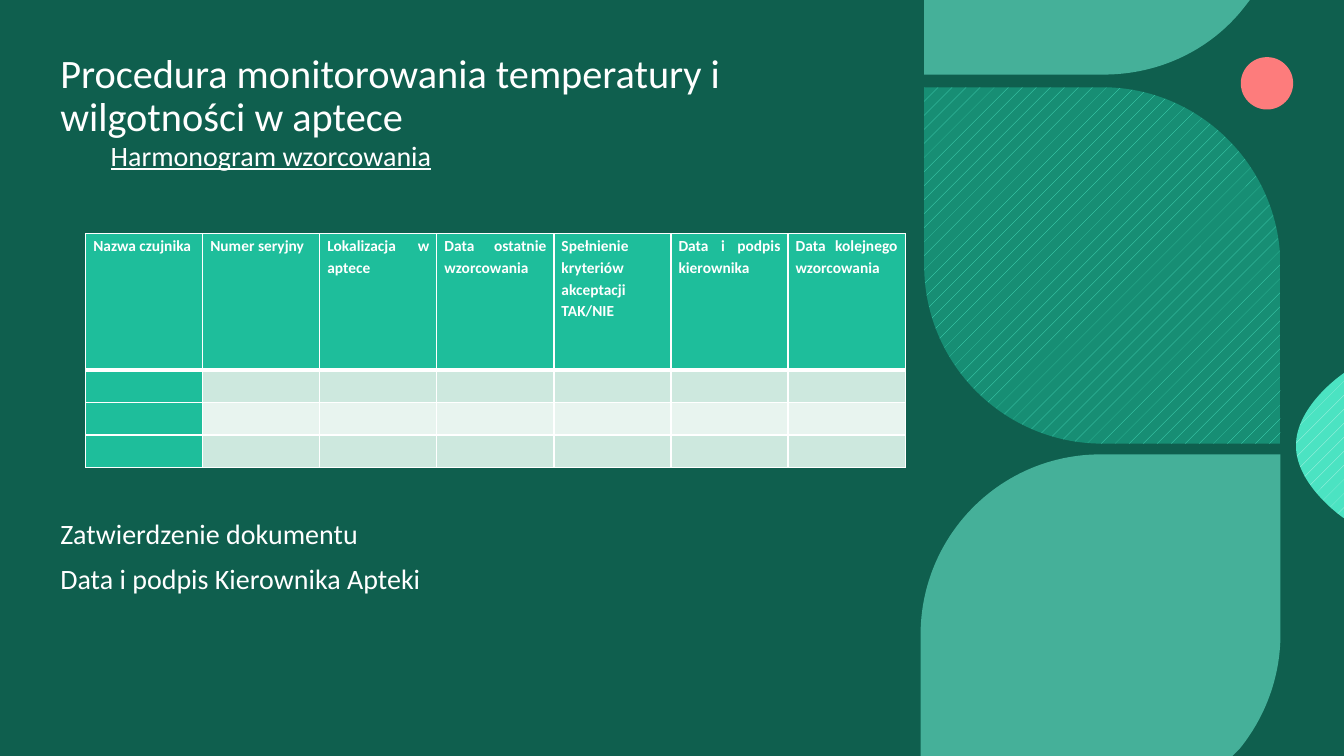
from lxml import etree
from pptx import Presentation
from pptx import util as u
from pptx.dml.color import RGBColor
from pptx.enum import dml, shapes, text
from pptx.oxml import ns

COLORS = {
    "background": "09392F", "veil": "18997E", "dot": "FD7C7C", "leaf": "69E7CC",
    "bright": "4BE3C2", "pale": "C3F6EB", "deep": "178E74", "white": "FFFFFF",
    "header": "1EBE9B", "band": "CDE8DE", "light_band": "E8F4EF",
}
FONT = "Calibri"
SLIDE_SIZE = (33.87, 19.05)

TITLE = "Procedura monitorowania temperatury i wilgotności w aptece"
TITLE_BOX = (1.27, 1.22, 21.34, 2.44)
BODY_BOX = (1.27, 3.45, 21.34, 13.72)
# text, format
BODY = [
    ("Harmonogram wzorcowania", {"indent": 1.27, "underline": True}),
    ("Zatwierdzenie dokumentu", {"before": 249}),
    ("Data i podpis Kierownika Apteki", {"before": 10}),
]

HEADINGS = [
    "Nazwa czujnika", "Numer seryjny", "Lokalizacja w aptece", "Data ostatnie wzorcowania",
    "Spełnienie kryteriów akceptacji TAK/NIE", "Data i podpis kierownika",
    "Data kolejnego wzorcowania",
]
TABLE_LEFT, TABLE_TOP, COLUMN_WIDTH = 2.16, 5.89, 2.95
ROW_HEIGHTS = [3.43, 0.82, 0.82, 0.82]

# Pairs are corners; six numbers are a Bézier curve (two controls and an end).
LEAVES = [
    {"fill": "leaf", "outline": [
        (23.29, 0), (31.5, 0), (31.32, 0.23), (30.51, 1.24, 29.24, 1.88, 27.81, 1.88),
        (23.29, 1.88)]},
    {"fill": "leaf", "outline": [
        (27.74, 11.45), (32.27, 11.45), (32.27, 15.98),
        (32.27, 17.07, 31.88, 18.08, 31.24, 18.87), (31.06, 19.05), (23.2, 19.05),
        (23.2, 16), (23.2, 13.49, 25.22, 11.45, 27.74, 11.45)]},
    {"pattern": ("pale", "bright"), "outline": [
        (33.87, 9.4), (33.87, 13.06), (33.87, 13.06, 32.66, 12.24, 32.66, 11.23),
        (32.66, 10.21, 33.87, 9.4, 33.87, 9.4)]},
    {"pattern": ("bright", "deep"), "outline": [
        (32.27, 11.18), (27.79, 11.18), (25.3, 11.18, 23.29, 9.17, 23.29, 6.68),
        (23.29, 2.2), (27.79, 2.2), (30.25, 2.2, 32.27, 4.22, 32.27, 6.71)]},
]


def rgb(name):
    return RGBColor.from_string(COLORS[name])


def paint(shape, color, opacity=None):
    shape.shadow.inherit = False
    shape.line.fill.background()
    shape.fill.solid()
    shape.fill.fore_color.rgb = rgb(color)
    if opacity:
        color_element = shape._element.spPr.find(".//" + ns.qn("a:srgbClr"))
        etree.SubElement(color_element, ns.qn("a:alpha"), val=str(opacity * 1000))


def add_outline(slide, outline):
    """Draw every point as a corner, then join each curve's three points into a Bézier."""
    points = [(u.Cm(step[i]), u.Cm(step[i + 1]))
              for step in outline for i in range(0, len(step), 2)]
    builder = slide.shapes.build_freeform(*points[0])
    builder.add_line_segments(points[1:], close=True)
    shape = builder.convert_to_shape()
    lines = iter(shape._element.findall(".//" + ns.qn("a:lnTo")))
    for step in outline[1:]:
        segment = [next(lines) for _ in range(len(step) // 2)]
        if len(segment) == 3:
            curve = etree.Element(ns.qn("a:cubicBezTo"))
            segment[0].addprevious(curve)
            for line in segment:
                curve.append(line[0])
                line.getparent().remove(line)
    return shape


def add_leaf(slide, leaf):
    shape = add_outline(slide, leaf["outline"])
    paint(shape, leaf.get("fill", "leaf"), 60)
    if "pattern" in leaf:
        shape.fill.patterned()
        shape.fill.pattern = dml.MSO_PATTERN.PERCENT_5
        shape.fill.fore_color.rgb, shape.fill.back_color.rgb = map(rgb, leaf["pattern"])


def write(paragraph, line, size=20, spacing=0.9, before=0, after=0, align="LEFT",
          indent=0, bold=False, underline=False):
    paragraph.alignment = text.PP_ALIGN[align]
    paragraph.line_spacing = spacing
    paragraph.space_before, paragraph.space_after = u.Pt(before), u.Pt(after)
    if indent:
        paragraph._p.get_or_add_pPr().set("marL", str(u.Cm(indent)))
    run = paragraph.add_run()
    run.text = line
    run.font.name, run.font.size = FONT, u.Pt(size)
    run.font.bold, run.font.underline = bold, underline
    run.font.color.rgb = rgb("white")


def add_text_frame(slide, place, anchor):
    frame = slide.shapes.add_textbox(*map(u.Cm, place)).text_frame
    frame.word_wrap = True
    frame.vertical_anchor = anchor
    return frame


def add_borders(cell, **widths):
    properties = cell._tc.get_or_add_tcPr()
    for i, side in enumerate("LRTB"):
        line = etree.Element(ns.qn(f"a:ln{side}"), w=str(u.Pt(widths.get(side, 1))))
        fill = etree.SubElement(line, ns.qn("a:solidFill"))
        etree.SubElement(fill, ns.qn("a:srgbClr"), val=COLORS["white"])
        properties.insert(i, line)


def add_schedule(slide):
    table = slide.shapes.add_table(
        len(ROW_HEIGHTS), len(HEADINGS), u.Cm(TABLE_LEFT), u.Cm(TABLE_TOP),
        u.Cm(COLUMN_WIDTH * len(HEADINGS)), u.Cm(sum(ROW_HEIGHTS))).table
    for column in table.columns:
        column.width = u.Cm(COLUMN_WIDTH)
    for r, height in enumerate(ROW_HEIGHTS):
        table.rows[r].height = u.Cm(height)
        for c, heading in enumerate(HEADINGS):
            cell = table.cell(r, c)
            cell.margin_left = cell.margin_right = u.Cm(0.19)
            cell.margin_top = cell.margin_bottom = 0
            band = "band" if r % 2 else "light_band"
            cell.fill.solid()
            cell.fill.fore_color.rgb = rgb("header" if r == 0 or c == 0 else band)
            add_borders(cell, B=3 if r == 0 else 1, T=3 if r == 1 else 1)
            if r == 0:
                write(cell.text_frame.paragraphs[0], heading, size=11, spacing=1.15,
                      after=10, align="JUSTIFY", bold=True)


def main():
    presentation = Presentation()
    presentation.slide_width, presentation.slide_height = map(u.Cm, SLIDE_SIZE)
    slide = presentation.slides.add_slide(presentation.slide_layouts[6])
    slide.background.fill.solid()
    slide.background.fill.fore_color.rgb = rgb("background")

    veil = slide.shapes.add_shape(shapes.MSO_SHAPE.RECTANGLE, 0, 0, *map(u.Cm, SLIDE_SIZE))
    paint(veil, "veil", 40)
    dot = slide.shapes.add_shape(shapes.MSO_SHAPE.OVAL, *map(u.Cm, (31.27, 1.44, 1.32, 1.32)))
    paint(dot, "dot")
    for leaf in LEAVES:
        add_leaf(slide, leaf)

    title = add_text_frame(slide, TITLE_BOX, text.MSO_ANCHOR.BOTTOM)
    write(title.paragraphs[0], TITLE, size=28.8)
    body = add_text_frame(slide, BODY_BOX, text.MSO_ANCHOR.TOP)
    for i, (line, style) in enumerate(BODY):
        write(body.add_paragraph() if i else body.paragraphs[0], line, **style)
    add_schedule(slide)
    presentation.save("out.pptx")


if __name__ == "__main__":
    main()
